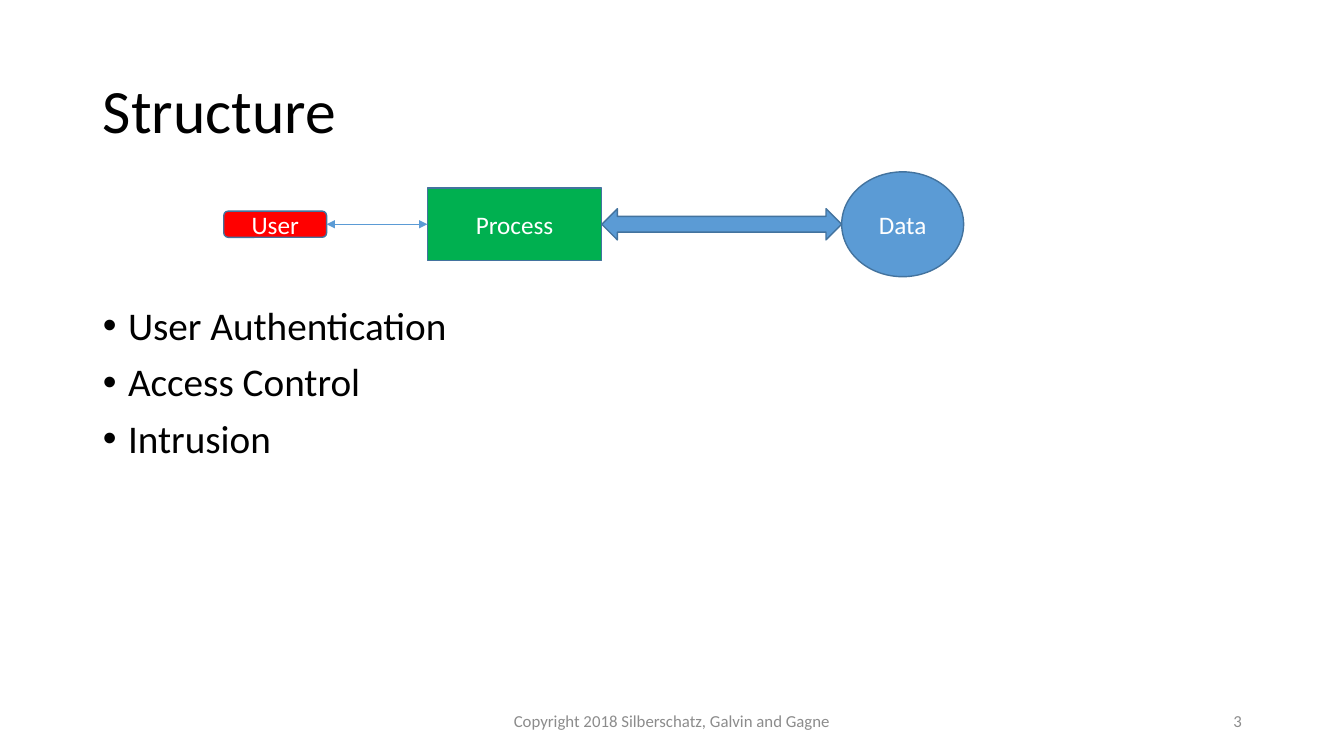
from dataclasses import dataclass

from lxml import etree
from pptx import Presentation
from pptx.dml.color import RGBColor
from pptx.enum.shapes import MSO_CONNECTOR as Connector
from pptx.enum.shapes import MSO_SHAPE as Preset
from pptx.enum.text import MSO_ANCHOR as Anchor
from pptx.enum.text import PP_ALIGN as Align
from pptx.oxml.ns import qn
from pptx.util import Pt

FONT = "Calibri"
BLACK, WHITE, GREY = "000000", "FFFFFF", "8C8C8C"
BLUE, OUTLINE = "5B9BD5", "43739E"
AXIS = 160.2  # vertical centre of the diagram
MARGIN, CONTENT_WIDTH = 66.24, 828


@dataclass
class Node:
    label: str
    preset: Preset
    left: float
    width: float
    height: float
    fill: str

    @property
    def right(self) -> float:
        return self.left + self.width


@dataclass
class Footer:
    text: str
    left: float
    width: float
    align: Align


USER = Node("User", Preset.ROUNDED_RECTANGLE, 159.84, 73.44, 18.72, "FF0000")
PROCESS = Node("Process", Preset.RECTANGLE, 305.28, 124.56, 51.84, "00B050")
DATA = Node("Data", Preset.OVAL, 601.2, 87.12, 74.88, BLUE)
DATA_FLOW = Node("", Preset.LEFT_RIGHT_ARROW, PROCESS.right,
                 DATA.left - PROCESS.right, 22.32, BLUE)
NODES = [DATA, PROCESS, DATA_FLOW, USER]

TOPICS = ["User Authentication", "Access Control", "Intrusion"]

FOOTERS = [
    Footer("Copyright 2018 Silberschatz, Galvin and Gagne", 318, 324, Align.CENTER),
    Footer("3", 678.24, 216, Align.RIGHT),
]


def color(value: str) -> RGBColor:
    return RGBColor.from_string(value)


def apply(target, formats: dict) -> None:
    for name, value in formats.items():
        setattr(target, name, value)


def place(shape, left: float, top: float, width: float, height: float) -> None:
    apply(shape, {"left": Pt(left), "top": Pt(top),
                  "width": Pt(width), "height": Pt(height)})


def style(para, size: float, ink: str, **formats) -> None:
    apply(para, formats)
    apply(para.font, {"name": FONT, "size": Pt(size)})
    para.font.color.rgb = color(ink)


def add_bullet(para, indent: float) -> None:
    props = para._p.get_or_add_pPr()
    props.set("marL", str(Pt(indent)))
    props.set("indent", str(-Pt(indent)))
    etree.SubElement(props, qn("a:buFont")).set("typeface", "Arial")
    etree.SubElement(props, qn("a:buChar")).set("char", "•")


def add_node(page, node: Node) -> None:
    shape = page.shapes.add_shape(node.preset, Pt(node.left), Pt(AXIS - node.height / 2),
                                  Pt(node.width), Pt(node.height))
    shape.shadow.inherit = False
    shape.fill.solid()
    shape.fill.fore_color.rgb = color(node.fill)
    shape.line.color.rgb = color(OUTLINE)
    shape.line.width = Pt(1)
    if node.label:
        frame = shape.text_frame
        frame.vertical_anchor = Anchor.MIDDLE
        frame.text = node.label
        style(frame.paragraphs[0], 18, WHITE, alignment=Align.CENTER)


def add_double_arrow(page, start: float, end: float) -> None:
    arrow = page.shapes.add_connector(Connector.STRAIGHT, Pt(start), Pt(AXIS),
                                      Pt(end), Pt(AXIS))
    arrow.line.color.rgb = color(BLUE)
    arrow.line.width = Pt(0.5)
    line = arrow.line._get_or_add_ln()
    for tip in ("a:headEnd", "a:tailEnd"):
        etree.SubElement(line, qn(tip)).set("type", "triangle")
    etree.SubElement(arrow._element.spPr, qn("a:effectLst"))


def add_footer(page, footer: Footer) -> None:
    box = page.shapes.add_textbox(Pt(footer.left), Pt(500.4), Pt(footer.width), Pt(28.8))
    frame = box.text_frame
    apply(frame, {"word_wrap": True, "vertical_anchor": Anchor.MIDDLE, "text": footer.text})
    style(frame.paragraphs[0], 12, GREY, alignment=footer.align)


def main() -> None:
    deck = Presentation()
    apply(deck, {"slide_width": Pt(960), "slide_height": Pt(540)})
    page = deck.slides.add_slide(deck.slide_layouts[1])

    # Title
    title = page.shapes.title
    place(title, MARGIN, 28.8, CONTENT_WIDTH, 104.4)
    apply(title.text_frame, {"text": "Structure", "vertical_anchor": Anchor.MIDDLE})
    style(title.text_frame.paragraphs[0], 44, BLACK,
          alignment=Align.LEFT, line_spacing=0.9)

    # Topic list
    body = page.placeholders[1]
    place(body, MARGIN, 215.28, CONTENT_WIDTH, 197.28)
    body.text_frame.text = "\n".join(TOPICS)
    for index, para in enumerate(body.text_frame.paragraphs):
        add_bullet(para, 18)
        style(para, 28, BLACK, line_spacing=0.9, space_before=Pt(10 if index else 0))

    # Diagram
    for node in NODES:
        add_node(page, node)
    add_double_arrow(page, USER.right, PROCESS.left)

    # Footer
    for footer in FOOTERS:
        add_footer(page, footer)

    deck.save("out.pptx")


if __name__ == "__main__":
    main()
